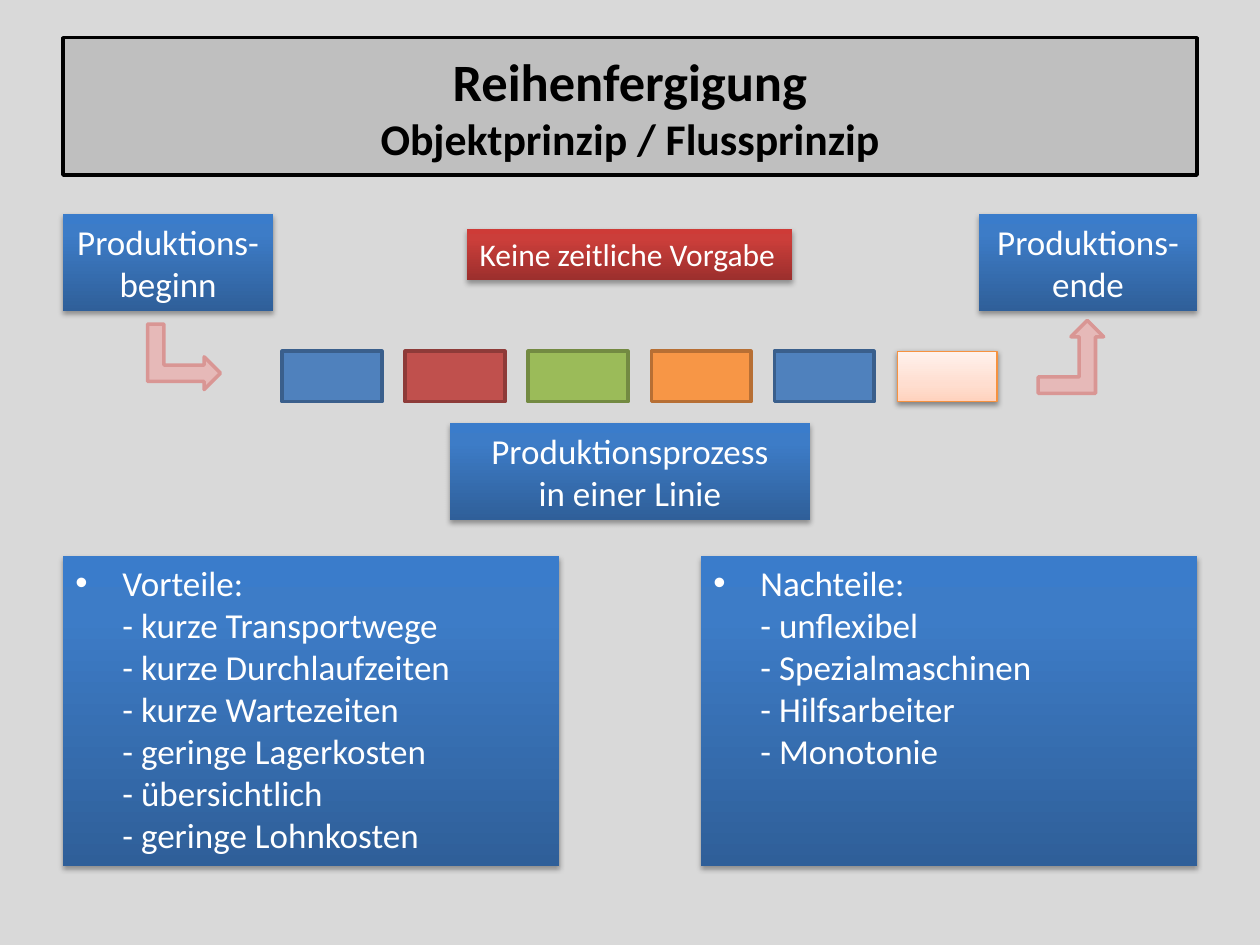
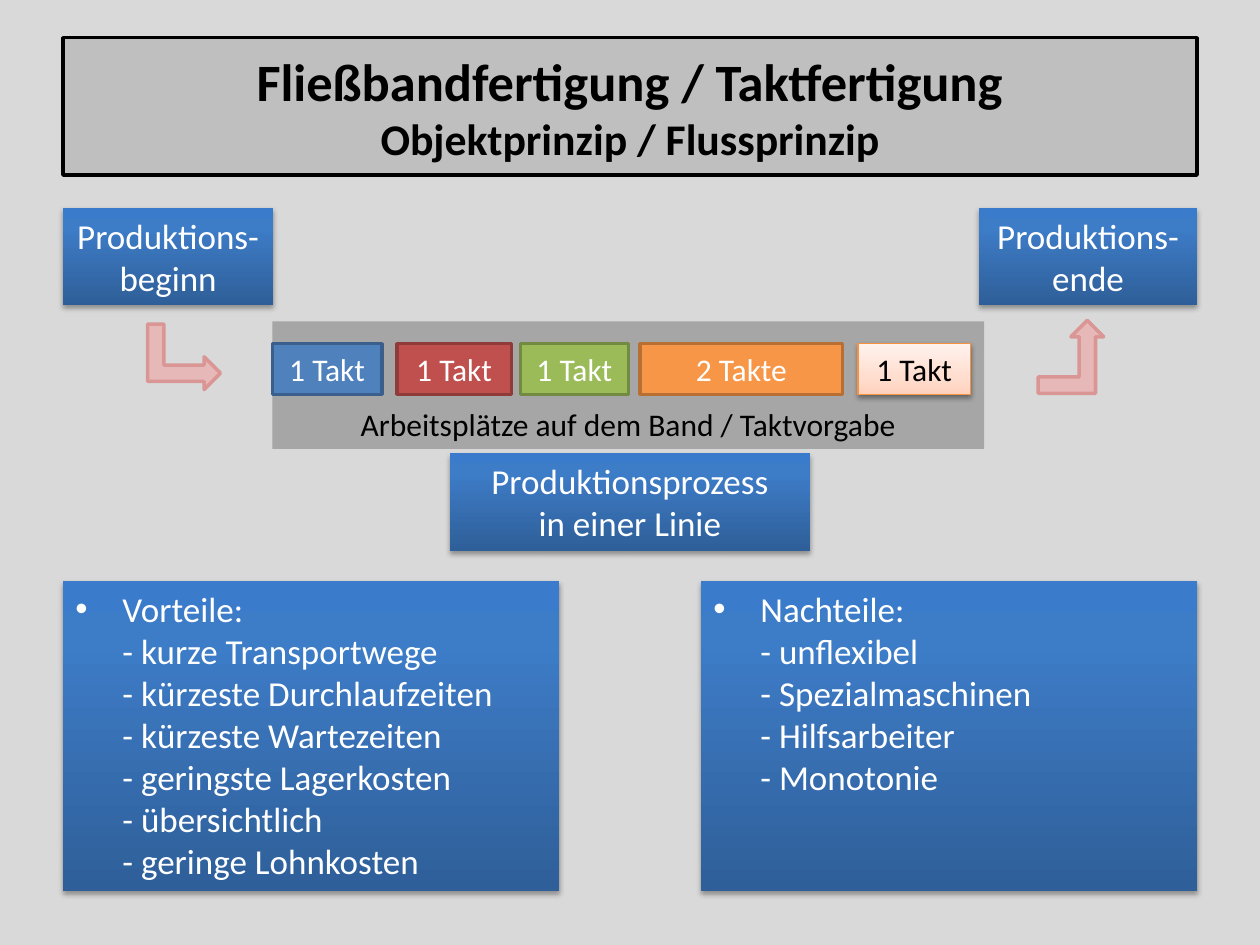
from dataclasses import dataclass

from lxml import etree
from pptx import Presentation, util as u
from pptx.dml.color import RGBColor
from pptx.enum import shapes, text
from pptx.oxml.ns import qn

# Content: stations are (label, left, width, style), lengths in cm
LINE_STYLES = ["blue", "red", "green", "orange", "blue", "pale"]
DRAWBACKS = ["Nachteile:", "- unflexibel", "- Spezialmaschinen",
             "- Hilfsarbeiter", "- Monotonie"]
SLIDES = [
    dict(
        title="Reihenfergigung",
        ends_top=4.32, process_top=8.53, panel_top=11.2, station_top=7.08,
        note="Keine zeitliche Vorgabe",
        stations=[("", 5.69 + 2.48 * i, 2.01, style)
                  for i, style in enumerate(LINE_STYLES)],
        benefits=["Vorteile:", "- kurze Transportwege", "- kurze Durchlaufzeiten",
                  "- kurze Wartezeiten", "- geringe Lagerkosten",
                  "- übersichtlich", "- geringe Lohnkosten"],
    ),
    dict(
        title="Fließbandfertigung / Taktfertigung",
        ends_top=4.19, process_top=9.14, panel_top=11.71, station_top=6.93,
        belt="Arbeitsplätze auf dem Band / Taktvorgabe",
        stations=[("1 Takt", 5.49, 2.21, "blue"), ("1 Takt", 8, 2.31, "red"),
                  ("1 Takt", 10.49, 2.18, "green"), ("2 Takte", 12.9, 4.09, "orange"),
                  ("1 Takt", 17.3, 2.26, "pale")],
        benefits=["Vorteile:", "- kurze Transportwege", "- kürzeste Durchlaufzeiten",
                  "- kürzeste Wartezeiten", "- geringste Lagerkosten",
                  "- übersichtlich", "- geringe Lohnkosten"],
    ),
]
SUBTITLE = "Objektprinzip / Flussprinzip"
START, END = "Produktions-\nbeginn", "Produktions-\nende"
PROCESS = "Produktionsprozess\nin einer Linie"


@dataclass(frozen=True)
class Style:
    fill: object                 # one colour, or a list of (percent, colour)
    line: tuple = None           # colour, points
    shadow: tuple = None         # opacity in percent, distance in points
    ink: str = "FFFFFF"


class Theme:
    font = "Calibri"
    background = "D9D9D9"
    title_size, subtitle_size, body_size, label_size = 30, 25, 20, 18
    left, right = 1.27, 24.13    # page margins
    title = Style("BFBFBF", ("000000", 2), ink="000000")
    belt = Style("A6A6A6", ink="000000")
    arrow = Style("E6B9B8", ("D99694", 2))
    box = Style([(0, "2F5F99"), (80, "3D7CC7"), (100, "3A7CCB")], shadow=(35, 1.8))
    note = Style([(0, "9C2F2D"), (80, "CB3E3A"), (100, "CE3B37")], shadow=(35, 1.8))
    stations = {
        "blue": Style("4F81BD", ("3A5F8C", 2)),
        "red": Style("C0504D", ("8E3B39", 2)),
        "green": Style("9BBB59", ("738A42", 2)),
        "orange": Style("F79646", ("B76F34", 2)),
        "pale": Style([(0, "FFD2BD"), (35, "FFDED0"), (100, "FFF2ED")],
                      ("F69240", 0.75), (38, 1.6), "000000"),
    }


# Formatting helpers
def add_xml(parent, tag, **attributes):
    return etree.SubElement(parent, qn(tag), {k: str(v) for k, v in attributes.items()})


def paint(shape, style):
    """Give a shape its fill, outline and shadow."""
    if isinstance(style.fill, str):
        shape.fill.solid()
        shape.fill.fore_color.rgb = RGBColor.from_string(style.fill)
    else:
        shape.fill.gradient()
        shape.fill.gradient_angle = 90
        stops = shape._element.spPr.find(".//" + qn("a:gsLst"))
        for stop in list(stops):
            stops.remove(stop)
        for percent, colour in style.fill:
            add_xml(add_xml(stops, "a:gs", pos=percent * 1000), "a:srgbClr", val=colour)
    if style.line:
        colour, width = style.line
        shape.line.color.rgb = RGBColor.from_string(colour)
        shape.line.width = u.Pt(width)
    else:
        shape.line.fill.background()
    shape.shadow.inherit = False
    if style.shadow:
        opacity, distance = style.shadow
        effects = shape._element.spPr.find(qn("a:effectLst"))
        shadow = add_xml(effects, "a:outerShdw", blurRad=u.Pt(3.1), dist=u.Pt(distance),
                         dir=5400000, rotWithShape=0)
        add_xml(add_xml(shadow, "a:srgbClr", val="000000"), "a:alpha", val=opacity * 1000)


def write(shape, words, sizes=(Theme.body_size,), ink="FFFFFF", bold=False,
          align="CENTER", anchor="TOP", bullet=False):
    """Write paragraphs split at newlines; the last size serves the rest."""
    frame = shape.text_frame
    frame.word_wrap = True
    frame.auto_size = text.MSO_AUTO_SIZE.NONE
    frame.vertical_anchor = text.MSO_ANCHOR[anchor]
    frame.text = words
    for i, para in enumerate(frame.paragraphs):
        para.alignment = text.PP_ALIGN[align]
        for span in para.runs:
            span.font.name = Theme.font
            span.font.size = u.Pt(sizes[min(i, len(sizes) - 1)])
            span.font.bold = bold
            span.font.color.rgb = RGBColor.from_string(ink)
        if bullet:
            props = para._p.get_or_add_pPr()
            props.set("marL", str(u.Cm(0.95)))
            props.set("indent", str(-u.Cm(0.95)))
            add_xml(props, "a:buFont", typeface="Arial")
            add_xml(props, "a:buChar", char="•")


def add_box(page, place, style, words="", kind="RECTANGLE", **formats):
    shape = page.shapes.add_shape(shapes.MSO_SHAPE[kind], *map(u.Cm, place))
    paint(shape, style)
    if words:
        write(shape, words, ink=style.ink, **formats)
    return shape


# Slide parts
def add_title(page, title):
    box = page.shapes.title
    box.left, box.top, box.width, box.height = map(
        u.Cm, (Theme.left, 0.76, Theme.right - Theme.left, 2.77))
    paint(box, Theme.title)
    write(box, f"{title}\n{SUBTITLE}", sizes=(Theme.title_size, Theme.subtitle_size),
          ink=Theme.title.ink, bold=True, anchor="MIDDLE")


def add_flow(page, content):
    label = (Theme.label_size,)
    if "belt" in content:
        add_box(page, (5.49, 6.48, 14.35, 2.57), Theme.belt, content["belt"],
                sizes=label, anchor="BOTTOM")
    if "note" in content:
        add_box(page, (9.42, 4.62, 6.55, 1.02), Theme.note, content["note"],
                sizes=label, align="LEFT")

    top, height, end_width = content["ends_top"], 1.96, 4.39
    add_box(page, (Theme.left, top, 4.24, height), Theme.box, START)
    add_box(page, (Theme.right - end_width, top, end_width, height), Theme.box, END)
    add_box(page, (9.07, content["process_top"], 7.26, height), Theme.box, PROCESS)

    for words, left, width, style in content["stations"]:
        add_box(page, (left, content["station_top"], width, 1.02), Theme.stations[style],
                words, sizes=label, anchor="MIDDLE")

    for left, turn in ((3.05, 90), (20.93, 0)):
        arrow = add_box(page, (left, 6.46, 1.32, 1.47), Theme.arrow, kind="BENT_UP_ARROW")
        arrow.rotation = turn


def add_panels(page, content):
    width = 10
    columns = ((Theme.left, content["benefits"]), (Theme.right - width, DRAWBACKS))
    for left, lines in columns:
        add_box(page, (left, content["panel_top"], width, 6.25), Theme.box,
                "\v".join(lines), align="LEFT", bullet=True)


def main():
    deck = Presentation()
    deck.slide_width, deck.slide_height = u.Cm(25.4), u.Cm(19.05)
    backdrop = deck.slide_master.background.fill
    backdrop.solid()
    backdrop.fore_color.rgb = RGBColor.from_string(Theme.background)
    title_only = deck.slide_layouts[5]
    for content in SLIDES:
        page = deck.slides.add_slide(title_only)
        add_title(page, content["title"])
        add_flow(page, content)
        add_panels(page, content)
    deck.save("out.pptx")


if __name__ == "__main__":
    main()
